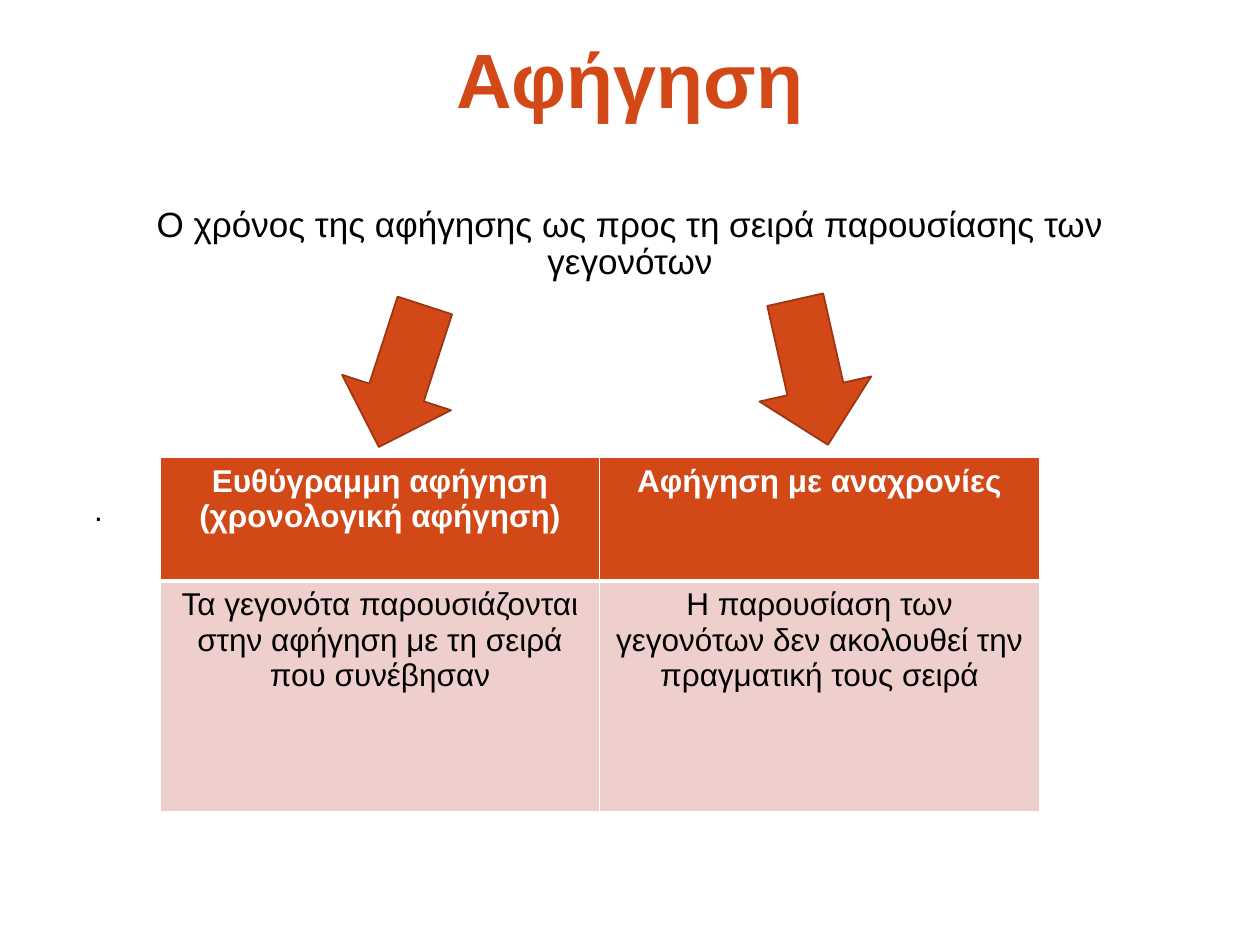
"""Builds a slide on the order in which a narrative presents its events."""
from lxml.etree import SubElement
from pptx import Presentation
from pptx.dml.color import RGBColor
from pptx.enum.shapes import MSO_SHAPE
from pptx.enum.text import MSO_ANCHOR, MSO_AUTO_SIZE, PP_ALIGN
from pptx.oxml import parse_xml
from pptx.oxml.ns import nsdecls, qn
from pptx.util import Cm, Pt

ORANGE = RGBColor(0xD3, 0x48, 0x17)
DARK_ORANGE = RGBColor(0x9C, 0x35, 0x11)
PINK = RGBColor(0xEF, 0xCF, 0xCC)
WHITE = RGBColor(0xFF, 0xFF, 0xFF)
BLACK = RGBColor(0x00, 0x00, 0x00)


def format_paragraph(paragraph, size, color, bold=False, align=PP_ALIGN.CENTER, spacing=0.9):
    paragraph.alignment = align
    paragraph.line_spacing = spacing
    paragraph.space_before = Pt(0)
    font = paragraph.font
    font.name, font.size, font.bold = "Arial", Pt(size), bold
    font.color.rgb = color


def add_borders(cell, widths):
    properties = cell._tc.get_or_add_tcPr()
    for index, (side, width) in enumerate(widths.items()):
        line = parse_xml(f'<a:{side} {nsdecls("a")} w="{Pt(width)}"/>')
        fill = SubElement(line, qn("a:solidFill"))
        SubElement(fill, qn("a:srgbClr"), val=str(WHITE))
        properties.insert(index, line)


deck = Presentation()
deck.slide_width, deck.slide_height = Cm(25.4), Cm(19.05)
page = deck.slides.add_slide(deck.slide_layouts[5])

title = page.shapes.title
title.left, title.top, title.width, title.height = Cm(1.9), Cm(0.41), Cm(21.6), Cm(2.54)
title.text_frame.text = "Αφήγηση"
title.text_frame.auto_size = MSO_AUTO_SIZE.NONE
title.text_frame.vertical_anchor = MSO_ANCHOR.MIDDLE
format_paragraph(title.text_frame.paragraphs[0], 44, ORANGE, bold=True)

texts = [
    ("Ο χρόνος της αφήγησης ως προς τη σειρά παρουσίασης των γεγονότων",
     4.17, 1.8, 20, PP_ALIGN.CENTER, 0.25),
    (".", 9.97, 0.8, 18, PP_ALIGN.LEFT, 0),
]
for words, top, height, size, align, inset in texts:
    box = page.shapes.add_textbox(Cm(1.9), Cm(top), Cm(21.6), Cm(height))
    frame = box.text_frame
    frame.word_wrap = True
    frame.margin_left = frame.margin_right = Cm(inset)
    frame.margin_top = frame.margin_bottom = 0
    frame.text = words
    format_paragraph(frame.paragraphs[0], size, BLACK, align=align)

for left, top, rotation in [(14.86, 6.35, 77.3), (6.6, 6.43, 108)]:
    arrow = page.shapes.add_shape(MSO_SHAPE.RIGHT_ARROW, Cm(left), Cm(top), Cm(3), Cm(2.31))
    arrow.rotation = rotation
    arrow.shadow.inherit = False
    arrow.fill.solid()
    arrow.fill.fore_color.rgb = ORANGE
    arrow.line.color.rgb = DARK_ORANGE
    arrow.line.width = Pt(1)

rows = [
    ("Ευθύγραμμη αφήγηση (χρονολογική αφήγηση)", "Αφήγηση με αναχρονίες"),
    ("Τα γεγονότα παρουσιάζονται στην αφήγηση με τη σειρά που συνέβησαν",
     "Η παρουσίαση των γεγονότων δεν ακολουθεί την πραγματική τους σειρά"),
]
row_styles = [(2.49, ORANGE, WHITE, True, 1, 3), (4.65, PINK, BLACK, False, 3, 1)]
table = page.shapes.add_table(2, 2, Cm(3.23), Cm(9.22), Cm(17.72), Cm(7.14)).table
for column in table.columns:
    column.width = Cm(8.86)
for row, words, style in zip(table.rows, rows, row_styles):
    height, fill, color, bold, top_line, bottom_line = style
    row.height = Cm(height)
    for cell, text in zip(row.cells, words):
        cell.text = text
        format_paragraph(cell.text_frame.paragraphs[0], 18, color, bold, spacing=1.0)
        cell.fill.solid()
        cell.fill.fore_color.rgb = fill
        add_borders(cell, {"lnL": 1, "lnR": 1, "lnT": top_line, "lnB": bottom_line})

deck.save("out.pptx")
